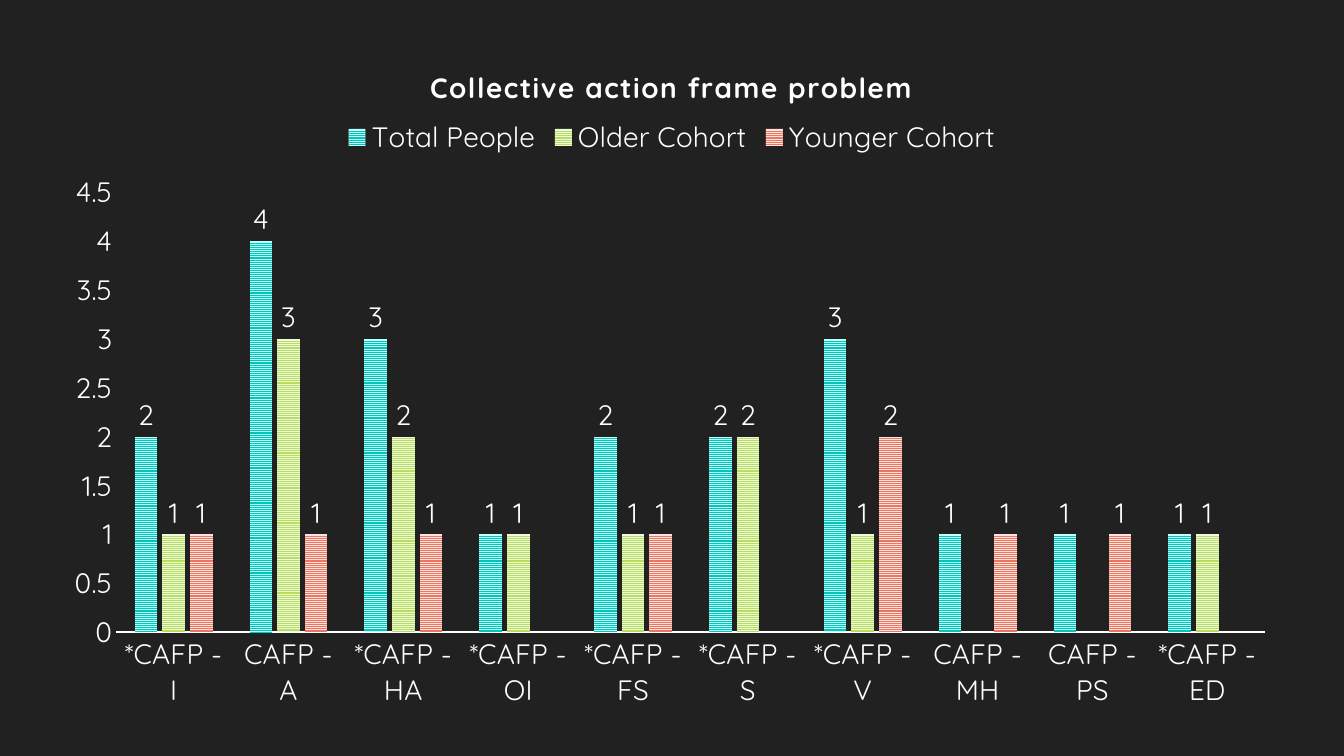
from lxml import etree
from pptx import Presentation
from pptx import util as u
from pptx.chart import data as cd
from pptx.dml.color import RGBColor
from pptx.enum import chart as ch, dml
from pptx.oxml.ns import qn

DARK = RGBColor(0x21, 0x21, 0x21)
WHITE = RGBColor(0xFF, 0xFF, 0xFF)
TEAL = RGBColor(0x00, 0xC6, 0xBB)
MINT = RGBColor(0xC1, 0xFF, 0xFC)
LIME = RGBColor(0xB6, 0xDF, 0x5E)
CREAM = RGBColor(0xF0, 0xF9, 0xDF)
CORAL = RGBColor(0xEF, 0x75, 0x5F)
BLUSH = RGBColor(0xFC, 0xE3, 0xDF)


def style(font, size=20):
    font.name = "Quicksand"
    font.size = u.Pt(size)
    font.color.rgb = WHITE


def place(part, index, **shares):
    for old in part.findall(qn("c:layout")):
        part.remove(old)
    layout = etree.Element(qn("c:layout"))
    part.insert(index, layout)
    manual = etree.SubElement(layout, qn("c:manualLayout"))
    if "w" in shares and index == 0:
        etree.SubElement(manual, qn("c:layoutTarget")).set("val", "inner")
    for side in ("x", "y"):
        etree.SubElement(manual, qn(f"c:{side}Mode")).set("val", "edge")
    for key, share in shares.items():
        etree.SubElement(manual, qn(f"c:{key}")).set("val", str(share))


deck = Presentation()
deck.slide_width, deck.slide_height = u.Inches(13.33), u.Inches(7.5)
slide = deck.slides.add_slide(deck.slide_layouts[6])
slide.background.fill.solid()
slide.background.fill.fore_color.rgb = DARK

cohorts = [
    ("Total People", (2, 4, 3, 1, 2, 2, 3, 1, 1, 1), TEAL, MINT),
    ("Older Cohort", (1, 3, 2, 1, 1, 2, 1, None, None, 1), LIME, CREAM),
    ("Younger Cohort", (1, 1, 1, None, 1, None, 2, 1, 1, None), CORAL, BLUSH),
]
data = cd.CategoryChartData()
data.categories = ["*CAFP - I", "CAFP - A", "*CAFP - HA", "*CAFP - OI", "*CAFP - FS",
                   "*CAFP - S", "*CAFP - V", "CAFP - MH", "CAFP - PS", "*CAFP - ED"]
for name, counts, front, back in cohorts:
    data.add_series(name, counts)

chart = slide.shapes.add_chart(
    ch.XL_CHART_TYPE.COLUMN_CLUSTERED, u.Inches(0.54), u.Inches(0.34),
    u.Inches(12.25), u.Inches(6.82), data).chart
style(chart.font, 10)

chart.has_title = True
head = chart.chart_title.text_frame.paragraphs[0]
run = head.add_run()
run.text = "Collective action frame problem"
style(head.font)
style(run.font)
head.font.bold = run.font.bold = True
run._r.get_or_add_rPr().set("spc", "100")
chart.chart_title.include_in_layout = False

chart.has_legend = True
key = chart.legend
key.position = ch.XL_LEGEND_POSITION.TOP
key.include_in_layout = False
style(key.font)

for axis in (chart.category_axis, chart.value_axis):
    axis.major_tick_mark = axis.minor_tick_mark = ch.XL_TICK_MARK.NONE
    axis.has_major_gridlines = False
    style(axis.tick_labels.font)
line = chart.category_axis.format.line
line.color.rgb = WHITE
line.width = u.Pt(1.5)
scale = chart.value_axis
scale.format.line.fill.background()
scale.minimum_scale, scale.maximum_scale, scale.major_unit = 0, 4.5, 0.5

plot = chart.plots[0]
plot.gap_width, plot.overlap = 164, -22
plot.vary_by_categories = False
for bars, (name, counts, front, back) in zip(plot.series, cohorts):
    fill = bars.format.fill
    fill.patterned()
    fill.pattern = dml.MSO_PATTERN.NARROW_HORIZONTAL
    fill.fore_color.rgb = front
    fill.back_color.rgb = back
    labels = bars.data_labels
    labels.show_value = True
    labels.position = ch.XL_LABEL_POSITION.OUTSIDE_END
    style(labels.font)

root = chart.element
place(root.find(".//" + qn("c:title")), 1, x=0.3, y=0.04)
place(root.find(".//" + qn("c:legend")), 1, x=0.23, y=0.12, w=0.54, h=0.06)
place(root.find(".//" + qn("c:plotArea")), 0, x=0.05, y=0.23, w=0.93, h=0.64)

deck.save("out.pptx")
